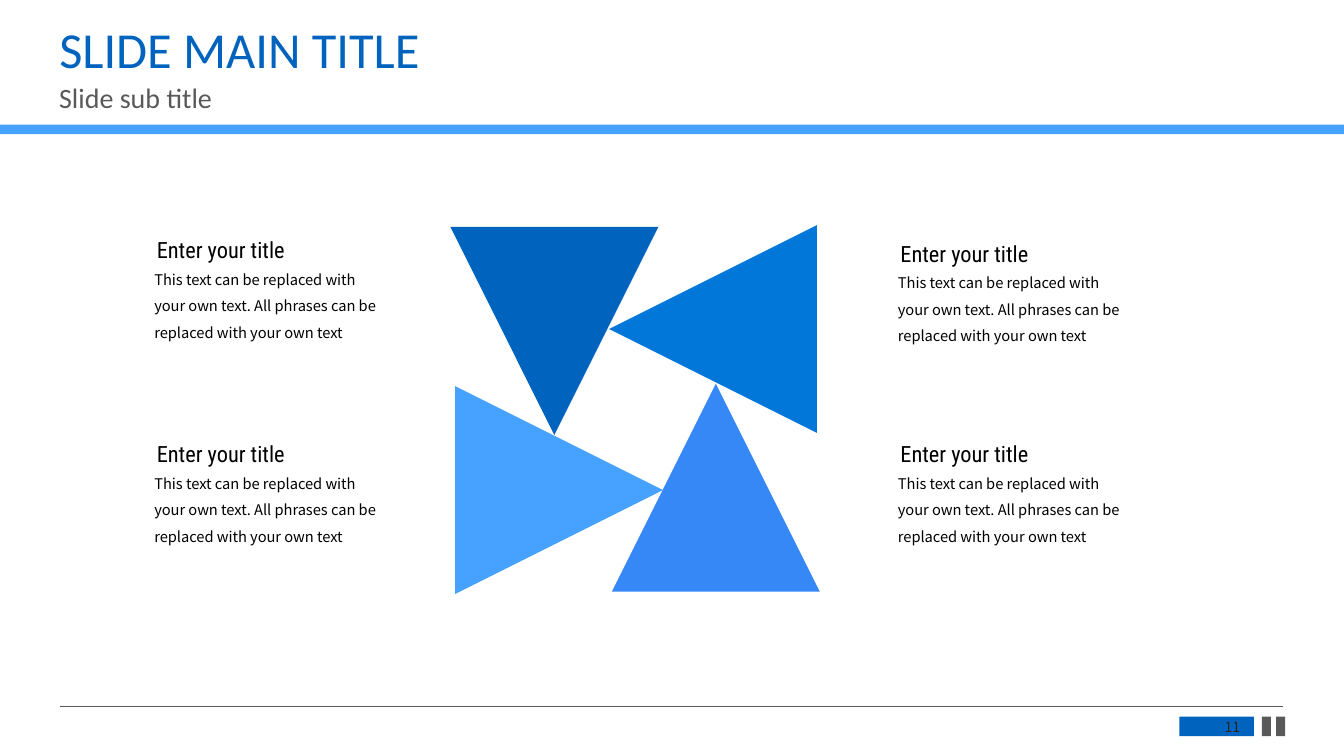
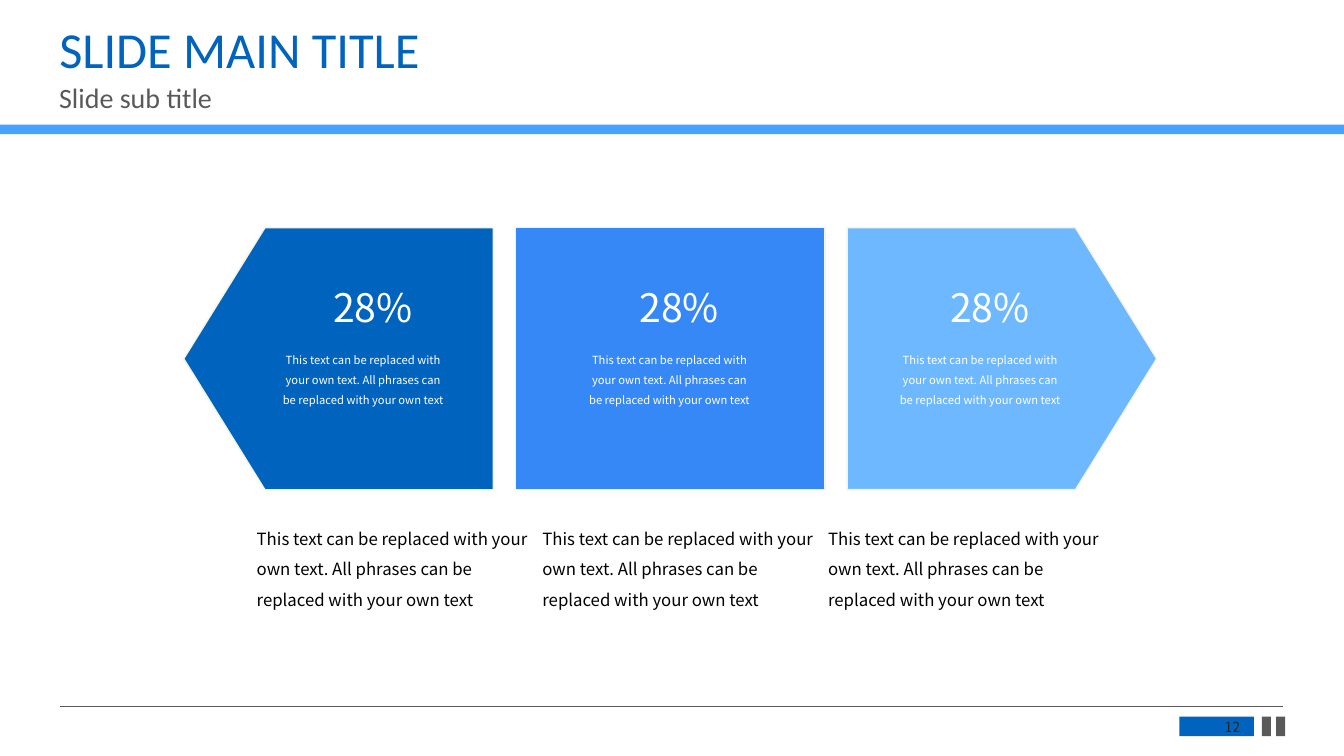
from dataclasses import dataclass

from lxml.etree import SubElement
from pptx import Presentation
from pptx.dml.color import RGBColor as RGB
from pptx.enum.shapes import MSO_CONNECTOR, MSO_SHAPE as SHAPE
from pptx.enum.text import MSO_ANCHOR as ANCHOR, MSO_AUTO_SIZE as FIT, PP_ALIGN as ALIGN
from pptx.oxml.ns import qn
from pptx.util import Cm, Pt


@dataclass(frozen=True)
class Theme:
    navy: str = "0063BE"
    blue: str = "0178D9"
    royal: str = "3688F7"
    sky: str = "47A1FE"
    pale: str = "6EB8FF"
    cream: str = "F5F4DD"
    gray: str = "595959"
    dark: str = "262626"
    black: str = "000000"
    white: str = "FFFFFF"
    head_font: str = "Calibri"
    label_font: str = "Roboto Condensed"
    body_font: str = "Noto Sans CJK JP"
    number_font: str = "Noto Sans CJK SC"
    title: float = 36
    percent: float = 28
    subtitle: float = 20
    label: float = 16
    caption: float = 12
    body: float = 10.5
    page: float = 10
    small: float = 8


T = Theme()
PHRASE = ("This text can be replaced with your own text. "
          "All phrases can be replaced with your own text")


def write(s, text, at, sp=None, font=T.body_font, size=T.body, color=T.black,
          align=ALIGN.LEFT, anchor=ANCHOR.TOP, spacing=1.0):
    """Write text in a new text box, or in sp when one is given."""
    x, y, w, h = map(Cm, at)
    sp = sp or s.shapes.add_textbox(x, y, w, h)
    sp.left, sp.top, sp.width, sp.height = x, y, w, h
    tf = sp.text_frame
    tf.word_wrap, tf.auto_size, tf.vertical_anchor = True, FIT.NONE, anchor
    p = tf.paragraphs[0]
    p.alignment, p.line_spacing = align, spacing
    r = p.add_run()
    r.text = text
    r.font.name, r.font.size = font, Pt(size)
    r.font.color.rgb = RGB.from_string(color)


def draw(s, kind, at, fill, line=None, rotation=0):
    """Draw a flat preset shape."""
    sp = s.shapes.add_shape(kind, *map(Cm, at))
    sp.shadow.inherit = False
    sp.rotation = rotation
    sp.fill.solid()
    sp.fill.fore_color.rgb = RGB.from_string(fill)
    if line:
        sp.line.color.rgb = RGB.from_string(line)
        sp.line.width = Pt(1)
    else:
        sp.line.fill.background()
    return sp


prs = Presentation()
prs.slide_width, prs.slide_height = Cm(33.87), Cm(19.05)

# Title-only layout without date, footer and number placeholders
layout = prs.slide_layouts[5]
for ph in list(layout.placeholders):
    if ph.placeholder_format.idx != 0:
        layout.shapes.element.remove(ph.element)
pinwheel, arrows = [prs.slides.add_slide(layout) for _ in range(2)]

# Shared band, footer rule and footer blocks, moved to the layout
rule = pinwheel.shapes.add_connector(
    MSO_CONNECTOR.STRAIGHT, Cm(1.52), Cm(17.8), Cm(32.33), Cm(17.8))
rule.line.color.rgb = RGB.from_string(T.gray)
rule.line.width = Pt(0.5)
SubElement(rule.element.spPr, qn("a:effectLst"))
shared = [rule, draw(pinwheel, SHAPE.RECTANGLE, (0, 3.14, 33.87, 0.24), T.sky)]
for x, w, fill in ((29.72, 1.88, T.navy), (31.8, 0.23, T.gray), (32.16, 0.23, T.gray)):
    shared.append(draw(pinwheel, SHAPE.RECTANGLE, (x, 18.06, w, 0.49), fill))
for sp in shared:
    layout.shapes.element.append(sp.element)

# Title, subtitle and page number
for page, s in enumerate((pinwheel, arrows), 11):
    write(s, "SLIDE MAIN TITLE", (1.24, 0.51, 30.94, 1.63), sp=s.shapes.title,
          font=T.head_font, size=T.title, color=T.navy, spacing=0.9)
    write(s, "Slide sub title", (1.24, 2.01, 30.94, 1.14),
          font=T.head_font, size=T.subtitle, color=T.gray, spacing=0.9)
    write(s, str(page), (29.82, 18.11, 1.68, 0.43), font=T.number_font,
          size=T.page, color=T.dark, align=ALIGN.RIGHT, anchor=ANCHOR.MIDDLE)

# Slide 11: pinwheel of four triangles
for x, y, rotation, fill in ((11.47, 9.73, 90, T.sky), (11.35, 5.72, 180, T.navy),
                             (15.42, 9.67, 0, T.royal), (15.35, 5.67, 270, T.blue)):
    draw(pinwheel, SHAPE.ISOSCELES_TRIANGLE, (x, y, 5.24, 5.24), fill, rotation=rotation)

# Slide 11: a heading and text beside each triangle
for x, y in ((22.11, 5.92), (22.11, 10.97), (3.37, 10.97), (3.37, 5.83)):
    write(pinwheel, "Enter your title", (x, y, 4.39, 0.94),
          font=T.label_font, size=T.label, align=ALIGN.CENTER)
    write(pinwheel, PHRASE, (x + 0.27, y + 0.64, 6.25, 2.29), spacing=1.5)

# Slide 12: three panels, the outer two pointing outwards
panels = ((SHAPE.PENTAGON, 180, T.navy, 8.0),
          (SHAPE.RECTANGLE, 0, T.royal, 15.72),
          (SHAPE.PENTAGON, 0, T.pale, 23.55))
for i, (kind, rotation, fill, x) in enumerate(panels):
    sp = draw(arrows, kind, (4.63 + 8.36 * i, 5.74, 7.8, 6.6), fill, T.cream, rotation)
    if kind == SHAPE.PENTAGON:
        sp.adjustments[0] = 0.31
    write(arrows, "28%", (x, 7.01, 2.79, 1.45), font=T.number_font,
          size=T.percent, color=T.white, align=ALIGN.CENTER)
    write(arrows, PHRASE, (x - 1.18, 8.61, 4.67, 2.31), size=T.small,
          color=T.white, align=ALIGN.CENTER, spacing=1.5)
    write(arrows, PHRASE, (6.22 + 7.2 * i, 12.95, 7.39, 2.55),
          size=T.caption, spacing=1.5)

prs.save("out.pptx")
